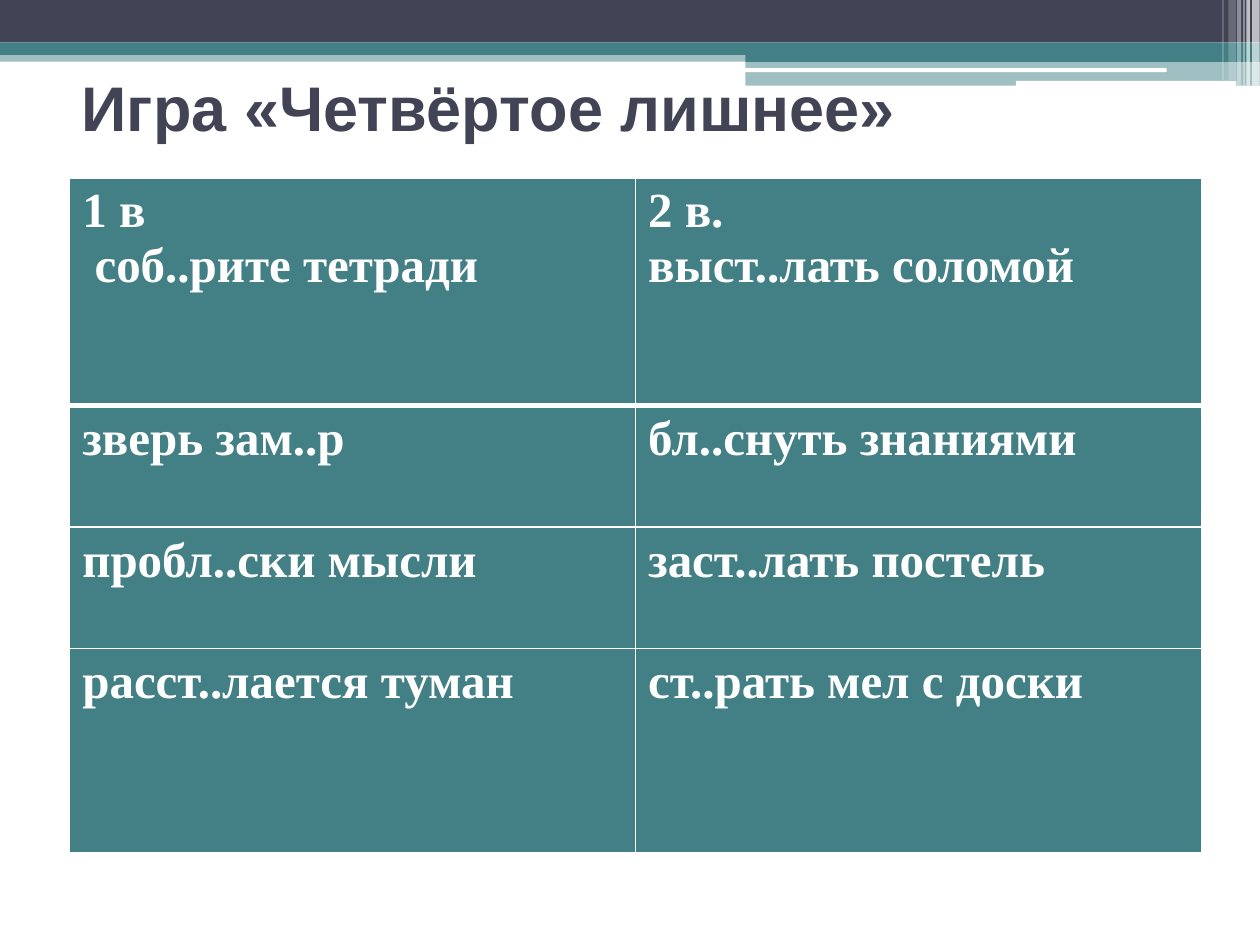
from lxml.etree import SubElement
from pptx import Presentation
from pptx.dml.color import RGBColor
from pptx.enum.shapes import MSO_SHAPE
from pptx.enum.text import MSO_ANCHOR
from pptx.oxml.ns import qn
from pptx.util import Pt

COLORS = {"dark": "424456", "teal": "438086", "white": "FFFFFF"}


class SlideBuilder:
    title_font = "Arial"
    body_font = "Times New Roman"

    def __init__(self, slide):
        self.s = slide

    def fill(self, target, color, alpha=100):
        target.fill.solid()
        target.fill.fore_color.rgb = RGBColor.from_string(COLORS[color])
        if alpha < 100:
            clr = target.fill._xPr.find(qn("a:solidFill"))[0]
            SubElement(clr, qn("a:alpha"), val=str(alpha * 1000))

    def bar(self, x, y, w, h, color, alpha=100, rounded=False):
        kind = MSO_SHAPE.ROUNDED_RECTANGLE if rounded else MSO_SHAPE.RECTANGLE
        sp = self.s.shapes.add_shape(kind, Pt(x), Pt(y), Pt(w), Pt(h))
        sp.shadow.inherit = False
        sp.line.fill.background()
        self.fill(sp, color, alpha)

    def run(self, p, text, font, size, color):
        r = p.add_run()
        r.text = text
        r.font.name = font
        r.font.size = Pt(size)
        r.font.bold = True
        r.font.color.rgb = RGBColor.from_string(COLORS[color])

    def title(self, x, y, w, h, text):
        tf = self.s.shapes.add_textbox(Pt(x), Pt(y), Pt(w), Pt(h)).text_frame
        tf.word_wrap = True
        tf.vertical_anchor = MSO_ANCHOR.MIDDLE
        self.run(tf.paragraphs[0], text, self.title_font, 36, "dark")

    def borders(self, cell, widths):
        tcPr = cell._tc.get_or_add_tcPr()
        for side, width in widths.items():
            ln = SubElement(tcPr, qn("a:ln" + side), w=str(Pt(width)))
            solid = SubElement(ln, qn("a:solidFill"))
            SubElement(solid, qn("a:srgbClr"), val=COLORS["white"])

    def table(self, x, y, col_w, heights, rows):
        n_cols = len(rows[0])
        tbl = self.s.shapes.add_table(len(rows), n_cols, Pt(x), Pt(y),
                                      Pt(col_w * n_cols), Pt(sum(heights))).table
        for col in tbl.columns:
            col.width = Pt(col_w)
        for i, (height, row) in enumerate(zip(heights, rows)):
            tbl.rows[i].height = Pt(height)
            for j, lines in enumerate(row):
                cell = tbl.cell(i, j)
                # Thick rule between the header and the body
                self.borders(cell, {"L": 1, "R": 1, "T": 3 if i == 1 else 1,
                                    "B": 3 if i == 0 else 1})
                self.fill(cell, "teal")
                tf = cell.text_frame
                for k, line in enumerate(lines):
                    p = tf.add_paragraph() if k else tf.paragraphs[0]
                    self.run(p, line, self.body_font, 28, "white")


def main():
    prs = Presentation()
    prs.slide_width, prs.slide_height = Pt(720), Pt(540)
    b = SlideBuilder(prs.slides.add_slide(prs.slide_layouts[6]))

    # Header bands
    b.bar(0, 28.8, 720, 6.5, "teal", 50)
    b.bar(0, 0, 720, 24.2, "dark")
    b.bar(0, 24.2, 720, 7.2, "teal")
    b.bar(426, 28.2, 294, 7.2, "teal")
    b.bar(426, 35, 294, 14, "teal", 50)
    b.bar(425.5, 39, 241.2, 2.2, "white", rounded=True)
    b.bar(580.5, 46.2, 126, 2.9, "white", rounded=True)

    # Stripes at the right edge: x, width, height, opacity
    for x, w, h, alpha in [(715.5, 4.3, 49, 65), (712.2, 2, 49, 65),
                           (710.5, 0.7, 49, 60), (707, 2.2, 49, 40),
                           (702, 4.3, 46, 20), (698.5, 0.7, 46, 30)]:
        b.bar(x, 0, w, h, "white", alpha)

    b.title(39.6, 36.4, 648, 48.6, "Игра «Четвёртое лишнее»")

    # Word table, one column for each variant
    b.table(39.85, 101.6, 323.3, [130.3, 69.3, 69.3, 116.6], [
        [["1 в", " соб..рите тетради"], ["2 в.", "выст..лать соломой"]],
        [["зверь зам..р"], ["бл..снуть знаниями"]],
        [["пробл..ски мысли"], ["заст..лать постель"]],
        [["расст..лается туман"], ["ст..рать мел с доски"]],
    ])

    prs.save("out.pptx")


if __name__ == "__main__":
    main()
